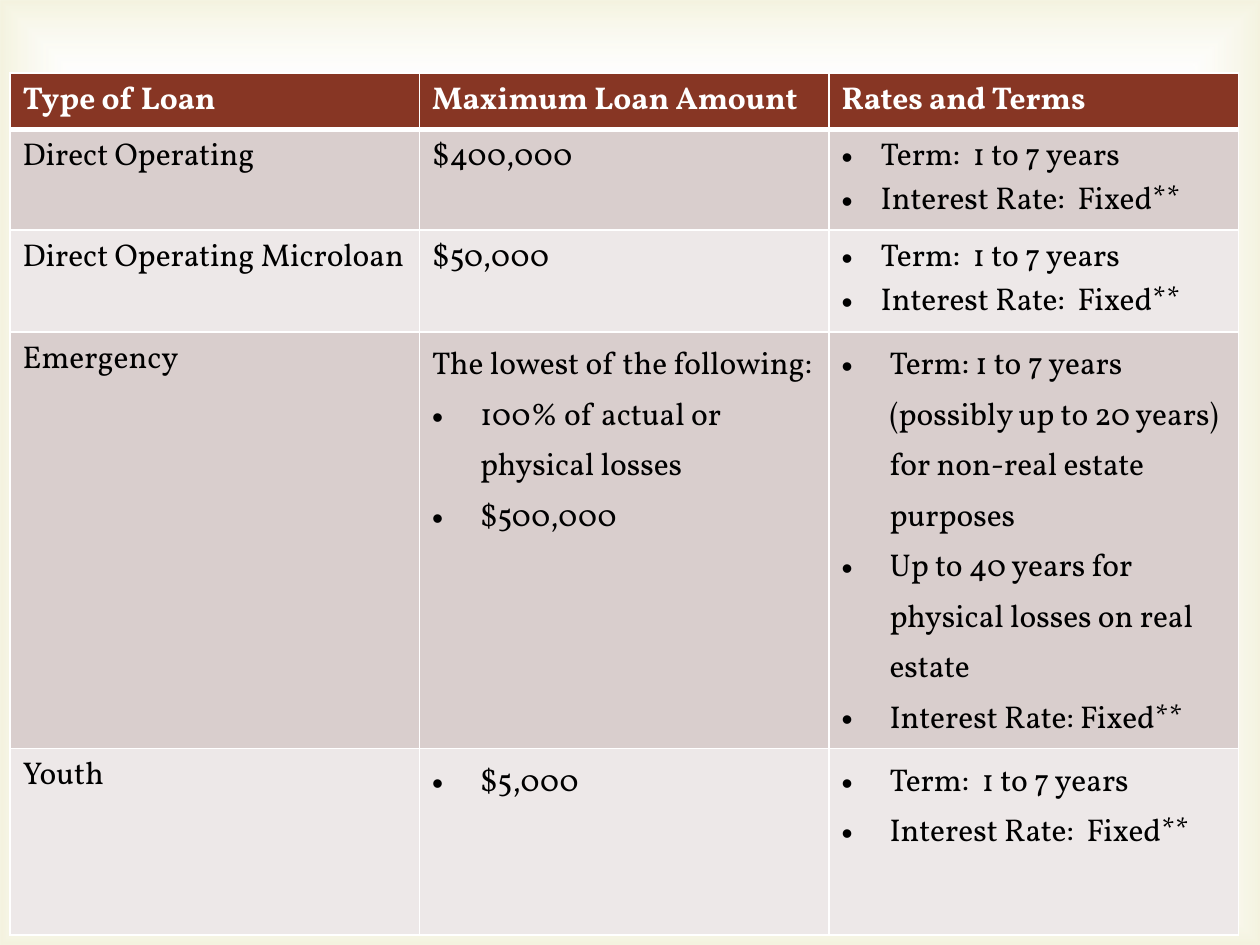
from pptx import Presentation
from pptx.dml.color import RGBColor
from pptx.enum.shapes import MSO_SHAPE
from pptx.oxml import parse_xml
from pptx.util import Inches, Pt
from lxml.etree import SubElement

URI = "http://schemas.openxmlformats.org/drawingml/2006/main"
NS = "{" + URI + "}"


def color(code):
    return RGBColor.from_string(code)


def write(frame, text, size=18, ink="000000", bold=False, indent=0, lines=None, bullets=True):
    """Fill a cell's frame, one paragraph per line; "•" at the start makes a bullet."""
    for i, line in enumerate(text.split("\n")):
        para = frame.paragraphs[0] if i == 0 else frame.add_paragraph()
        if lines:
            para.line_spacing = lines
        if line.startswith("•"):
            props = para._p.get_or_add_pPr()
            props.set("marL", str(Inches(indent)))
            props.set("indent", str(-Inches(indent)))
            SubElement(props, NS + "buFont", typeface="Arial")
            SubElement(props, NS + "buChar", char="•")
        run = para.add_run()
        run.text = line.removeprefix("•")
        font = run.font
        font.name, font.size, font.bold = "Vollkorn", Pt(size), bold
        font.color.rgb = color(ink)


deck = Presentation()
deck.slide_width, deck.slide_height = Inches(10), Inches(7.5)
slide = deck.slides.add_slide(deck.slide_layouts[6])

# Soft glow along the slide edges
glow = slide.shapes.add_shape(
    MSO_SHAPE.RECTANGLE, 0, 0, deck.slide_width, deck.slide_height)
glow.shadow.inherit = False
glow.line.fill.background()
glow.fill.background()
blank = glow._element.spPr.find(NS + "noFill")
blank.getparent().replace(blank, parse_xml(f"""
<a:gradFill xmlns:a="{URI}" rotWithShape="1"><a:gsLst>
  <a:gs pos="83000"><a:srgbClr val="FFFFFF"><a:alpha val="11000"/></a:srgbClr></a:gs>
  <a:gs pos="100000"><a:srgbClr val="D1CA75"><a:alpha val="23000"/></a:srgbClr></a:gs>
</a:gsLst><a:path path="rect">
  <a:fillToRect l="50000" t="50000" r="50000" b="50000"/>
</a:path></a:gradFill>"""))

terms = "•Term:  1 to 7 years\n•Interest Rate:  Fixed**"
loans = [
    ("Type of Loan", "Maximum Loan Amount", "Rates and Terms"),
    ("Direct Operating", "$400,000", terms),
    ("Direct Operating Microloan", "$50,000", terms),
    ("Emergency",
     "The lowest of the following:\n•100% of actual or physical losses\n•$500,000",
     "•Term: 1 to 7 years (possibly up to 20 years) for non-real estate purposes\n"
     "•Up to 40 years for physical losses on real estate\n•Interest Rate: Fixed**"),
    ("Youth", "•$5,000", terms),
]
heights = [0.43, 0.75, 0.81, 3.03, 1.48]

table = slide.shapes.add_table(
    len(loans), 3, Inches(0.08), Inches(0.58), Inches(9.75), Inches(6.5)).table
for col in table.columns:
    col.width = Inches(3.25)

for r, (loan, height) in enumerate(zip(loans, heights)):
    table.rows[r].height = Inches(height)
    head = r == 0
    shade = "873624" if head else ("EDE8E8", "D9CECD")[r % 2]
    loose = r >= 3
    for c, text in enumerate(loan):
        cell = table.cell(r, c)
        cell.fill.solid()
        cell.fill.fore_color.rgb = color(shade)
        write(cell.text_frame, text, bold=head,
              ink="FFFFFF" if head else "000000",
              indent=0.38 if loose else 0.31,
              lines=1.15 if loose and c else None)
        thick = {"B": head, "T": r == 1}
        for i, side in enumerate("LRTB"):
            width = Pt(3 if thick.get(side) else 1)
            cell._tc.get_or_add_tcPr().insert(i, parse_xml(
                f'<a:ln{side} xmlns:a="{URI}" w="{width}"><a:solidFill>'
                f'<a:srgbClr val="FFFFFF"/></a:solidFill></a:ln{side}>'))

deck.save("out.pptx")
